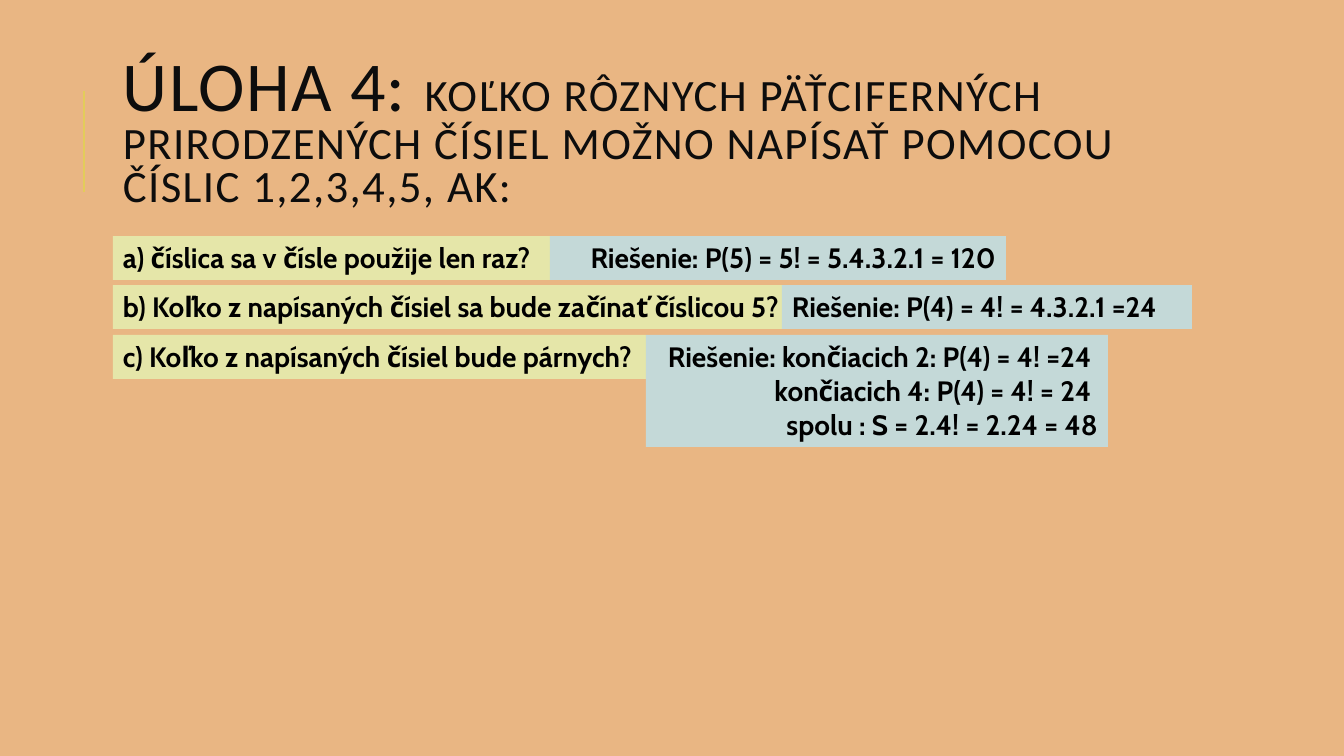
from lxml import etree
from pptx import Presentation
from pptx.dml.color import RGBColor
from pptx.enum.shapes import MSO_CONNECTOR, MSO_SHAPE
from pptx.enum.text import MSO_ANCHOR, MSO_AUTO_SIZE, PP_ALIGN
from pptx.oxml.ns import qn
from pptx.util import Pt

RECT = MSO_SHAPE.RECTANGLE
STRAIGHT = MSO_CONNECTOR.STRAIGHT
LEFT, RIGHT = PP_ALIGN.LEFT, PP_ALIGN.RIGHT
TOP, MIDDLE = MSO_ANCHOR.TOP, MSO_ANCHOR.MIDDLE
GROW = MSO_AUTO_SIZE.SHAPE_TO_FIT_TEXT

BACKGROUND = RGBColor(0xE9, 0xB6, 0x83)
ACCENT = RGBColor(0xE3, 0xCC, 0x5A)
TITLE_INK = RGBColor(0x0D, 0x0D, 0x0D)
BLACK = RGBColor(0, 0, 0)
QUESTION_FILL = RGBColor(0xE5, 0xE6, 0xA9)
ANSWER_FILL = RGBColor(0xC4, 0xD9, 0xD8)

WIDTH, HEIGHT = 1344, 756
SCALE = 12192000 / WIDTH
MARGIN = 113
FIRST_ROW, TWO_ROWS = 236, 99
LINE_HEIGHT, PADDING = 34, 10

TITLE = [
    ("ÚLOHA 4: ", 50),
    ("KOĽKO RÔZNYCH PÄŤCIFERNÝCH PRIRODZENÝCH ČÍSIEL "
     "MOŽNO NAPÍSAŤ POMOCOU ČÍSLIC 1,2,3,4,5, AK:", 32),
]
TASKS = [
    ("a) číslica sa v čísle použije len raz?", 437,
     "Riešenie: P(5) = 5! = 5.4.3.2.1 = 120", 550, 456, RIGHT),
    ("b) Koľko z napísaných čísiel sa bude začínať číslicou 5?", 682,
     "Riešenie: P(4) = 4! = 4.3.2.1 =24", 782, 410, LEFT),
    ("c) Koľko z napísaných čísiel bude párnych?", 533,
     "Riešenie: končiacich 2: P(4) = 4! =24 \n"
     "končiacich 4: P(4) = 4! = 24 \n"
     "spolu : S = 2.4! = 2.24 = 48", 646, 462, RIGHT),
]


def px(n):
    """Turn px into EMU."""
    return round(n * SCALE)


def add_text(p, text, *, size, font, color, bold=False, spacing=0):
    """Add text to a paragraph, with a line break at each newline."""
    for i, line in enumerate(text.split("\n")):
        if i:
            p.add_line_break()
        r = p.add_run()
        r.text = line
        r.font.size = Pt(size)
        r.font.name = font
        r.font.bold = bold
        r.font.color.rgb = color
        if spacing:
            r.font._element.set("spc", str(spacing * 100))


class Deck:
    """Hold the style and the current slide."""

    title_font = "Calibri"
    body_font = "Cabin"
    body_size = 20

    def __init__(self):
        """Start a presentation with one blank slide."""
        self.prs = Presentation()
        self.prs.slide_width, self.prs.slide_height = px(WIDTH), px(HEIGHT)
        self.s = self.prs.slides.add_slide(self.prs.slide_layouts[6])
        fill = self.s.background.fill
        fill.solid()
        fill.fore_color.rgb = BACKGROUND

    def line(self, x1, y1, x2, y2, color, width):
        """Draw a straight line."""
        sp = self.s.shapes.add_connector(STRAIGHT, px(x1), px(y1), px(x2), px(y2))
        sp.line.color.rgb = color
        sp.line.width = Pt(width)
        etree.SubElement(sp._element.spPr, qn("a:effectLst"))

    def title(self, x, y, w, h, parts):
        """Write the heading from parts of different sizes."""
        sp = self.s.shapes.add_textbox(px(x), px(y), px(w), px(h))
        tf = sp.text_frame
        tf.word_wrap = True
        tf.vertical_anchor = MIDDLE
        tf.margin_top, tf.margin_bottom = 0, px(25)
        p = tf.paragraphs[0]
        p.line_spacing = 0.8
        for text, size in parts:
            add_text(p, text, size=size, font=self.title_font,
                     color=TITLE_INK, spacing=1)

    def label(self, x, y, w, text, fill, align=LEFT):
        """Draw a filled box as tall as its lines of text."""
        h = LINE_HEIGHT * (text.count("\n") + 1) + PADDING
        sp = self.s.shapes.add_shape(RECT, px(x), px(y), px(w), px(h))
        sp.shadow.inherit = False
        sp.fill.solid()
        sp.fill.fore_color.rgb = fill
        sp.line.fill.background()
        tf = sp.text_frame
        tf.word_wrap = False
        tf.auto_size = GROW
        tf.vertical_anchor = TOP
        p = tf.paragraphs[0]
        p.alignment = align
        add_text(p, text, size=self.body_size, font=self.body_font,
                 color=BLACK, bold=True)


def main():
    """Build and save the slide."""
    deck = Deck()
    deck.line(84, 192, 84, 91, ACCENT, 1.5)
    deck.title(MARGIN, 64, 1072, 166, TITLE)
    for row, (question, width, answer, x, answer_width, align) in enumerate(TASKS):
        y = FIRST_ROW + row * TWO_ROWS // 2
        deck.label(MARGIN, y, width, question, QUESTION_FILL)
        deck.label(x, y, answer_width, answer, ANSWER_FILL, align)
    deck.prs.save("out.pptx")


if __name__ == "__main__":
    main()
